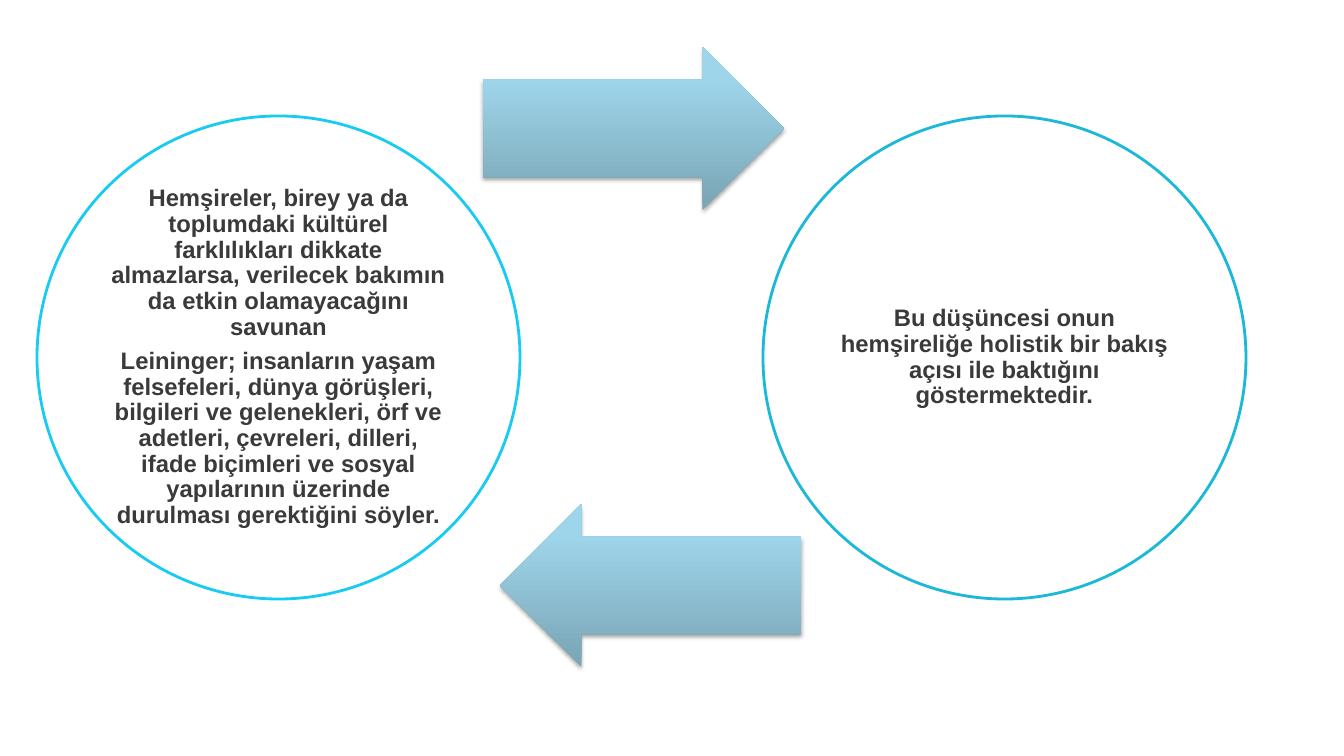
import pptx
import pptx.dml.color
import pptx.enum.shapes
import pptx.enum.text
import pptx.oxml
import pptx.oxml.ns
import pptx.util

EMU_PER_PX = 12192000 / 1344
SLIDE_SIZE = (1344, 756)
CIRCLE_TOP, CIRCLE_SIZE = 116, 483
ARROW_SIZE = (301, 163)

NURSES_TEXT = [
    "Hemşireler, birey ya da toplumdaki kültürel farklılıkları dikkate almazlarsa, "
    "verilecek bakımın da etkin olamayacağını savunan",
    "Leininger; insanların yaşam felsefeleri, dünya görüşleri, bilgileri ve gelenekleri, "
    "örf ve adetleri, çevreleri, dilleri, ifade biçimleri ve sosyal yapılarının üzerinde "
    "durulması gerektiğini söyler.",
]
HOLISTIC_TEXT = [
    "Bu düşüncesi onun hemşireliğe holistik bir bakış açısı ile baktığını göstermektedir.",
]


def px(length):
    return pptx.util.Emu(round(length * EMU_PER_PX))


def color(value):
    return pptx.dml.color.RGBColor.from_string(value)


class CycleSlide:
    font_name = "Arial"
    font_size = 17
    text_color = "3A3A3A"
    circle_fill = "FFFFFF"
    arrow_stops = [(0, "79A4B4"), (80, "9ED5EA"), (100, "9DD7EC")]

    def __init__(self, presentation):
        self.slide = presentation.slides.add_slide(presentation.slide_layouts[6])

    def add_shape(self, kind, left, top, width, height):
        shape = self.slide.shapes.add_shape(kind, px(left), px(top), px(width), px(height))
        shape.shadow.inherit = False
        return shape

    def add_circle(self, left, line_color, texts):
        circle = self.add_shape(pptx.enum.shapes.MSO_SHAPE.OVAL,
                                left, CIRCLE_TOP, CIRCLE_SIZE, CIRCLE_SIZE)
        circle.fill.solid()
        circle.fill.fore_color.rgb = color(self.circle_fill)
        circle.line.color.rgb = color(line_color)
        circle.line.width = pptx.util.Pt(2)
        self.set_text(circle.text_frame, texts)

    def set_text(self, frame, texts):
        frame.word_wrap = True
        frame.vertical_anchor = pptx.enum.text.MSO_ANCHOR.MIDDLE
        frame.margin_left = frame.margin_right = px(2)
        frame.margin_top = frame.margin_bottom = px(2)
        for index, text in enumerate(texts):
            paragraph = frame.add_paragraph() if index else frame.paragraphs[0]
            paragraph.text = text
            paragraph.alignment = pptx.enum.text.PP_ALIGN.CENTER
            paragraph.line_spacing = 0.9
            paragraph.space_after = pptx.util.Pt(6)
            paragraph.font.name = self.font_name
            paragraph.font.size = pptx.util.Pt(self.font_size)
            paragraph.font.bold = True
            paragraph.font.color.rgb = color(self.text_color)

    def add_arrow(self, left, top, rotation=0):
        arrow = self.add_shape(pptx.enum.shapes.MSO_SHAPE.RIGHT_ARROW, left, top, *ARROW_SIZE)
        arrow.adjustments[0] = 0.6
        arrow.adjustments[1] = 0.5
        arrow.rotation = rotation
        arrow.line.fill.background()
        self.add_gradient(arrow)
        self.add_shadow(arrow)

    def add_gradient(self, shape):
        """Fill from bottom to top, whatever the rotation of the shape."""
        stops = "".join(
            f'<a:gs pos="{position * 1000}"><a:srgbClr val="{value}"/></a:gs>'
            for position, value in self.arrow_stops)
        gradient = pptx.oxml.parse_xml(
            f'<a:gradFill {pptx.oxml.ns.nsdecls("a")} rotWithShape="0">'
            f'<a:gsLst>{stops}</a:gsLst><a:lin ang="16200000" scaled="0"/></a:gradFill>')
        geometry = shape.element.spPr.find(pptx.oxml.ns.qn("a:prstGeom"))
        geometry.addnext(gradient)

    def add_shadow(self, shape):
        """Cast a soft shadow straight down."""
        effects = shape.element.spPr.find(pptx.oxml.ns.qn("a:effectLst"))
        effects.append(pptx.oxml.parse_xml(
            f'<a:outerShdw {pptx.oxml.ns.nsdecls("a")} blurRad="40000" dist="23000" '
            'dir="5400000" rotWithShape="0"><a:srgbClr val="000000">'
            '<a:alpha val="35000"/></a:srgbClr></a:outerShdw>'))


def main():
    presentation = pptx.Presentation()
    presentation.slide_width, presentation.slide_height = map(px, SLIDE_SIZE)
    cycle = CycleSlide(presentation)
    cycle.add_circle(37, "1ACBF1", NURSES_TEXT)
    cycle.add_arrow(483, 47)
    cycle.add_circle(763, "1BB8D7", HOLISTIC_TEXT)
    cycle.add_arrow(500, 504, rotation=180)
    presentation.save("out.pptx")


if __name__ == "__main__":
    main()
